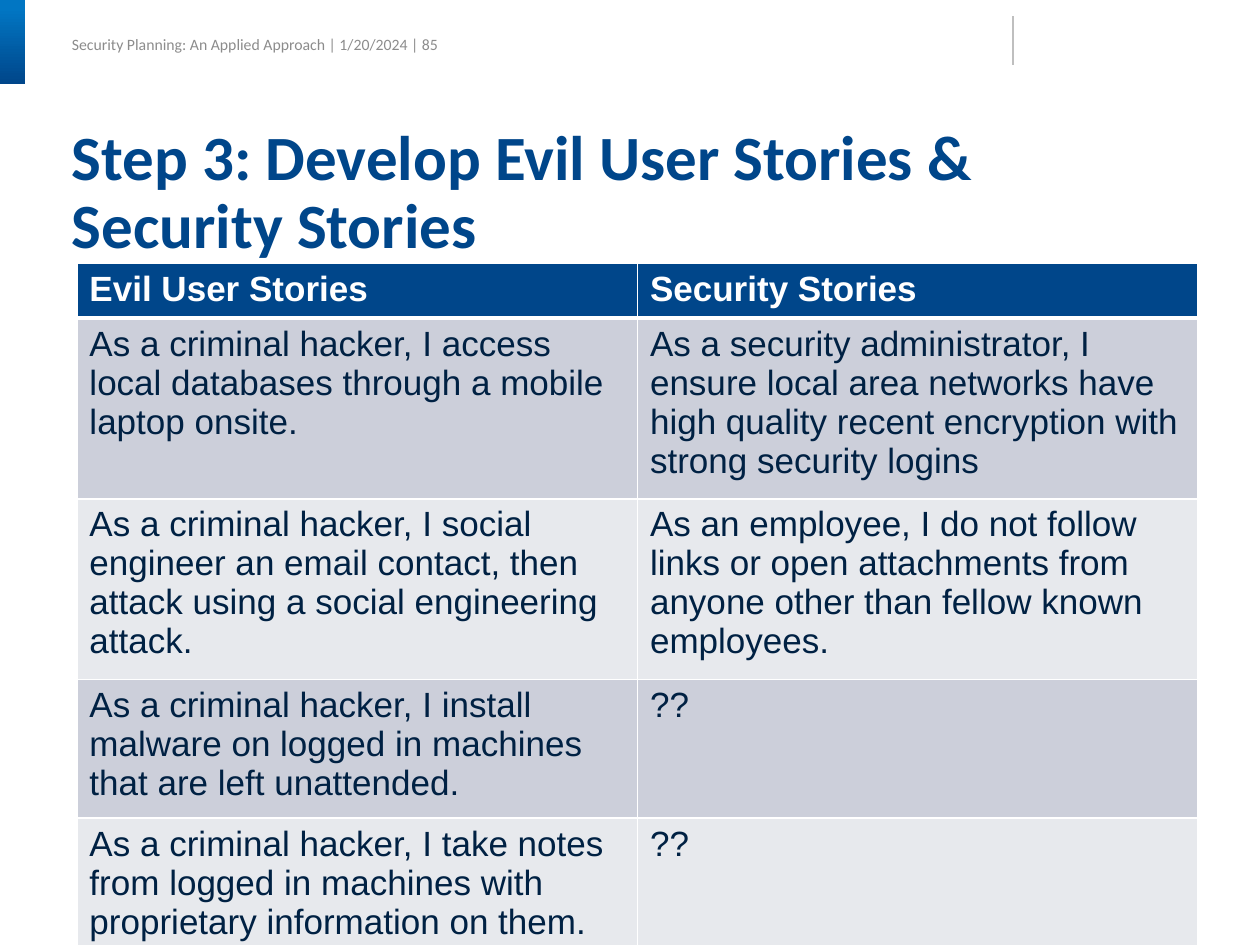
from lxml import etree
from pptx import Presentation
from pptx.dml.color import RGBColor
from pptx.enum.shapes import MSO_CONNECTOR, MSO_SHAPE
from pptx.enum.text import MSO_ANCHOR
from pptx.oxml import parse_xml
from pptx.oxml.ns import nsdecls, qn
from pptx.util import Cm, Pt

BLUE = RGBColor(0x00, 0x46, 0x8A)
LIGHT_BLUE = RGBColor(0x01, 0x76, 0xC3)
NAVY = RGBColor(0x00, 0x21, 0x43)
GRAY = RGBColor(0x8C, 0x8C, 0x8C)
LINE_GRAY = RGBColor(0xBF, 0xBF, 0xBF)
WHITE = RGBColor(0xFF, 0xFF, 0xFF)
BAND_DARK = RGBColor(0xCC, 0xCF, 0xDA)
BAND_LIGHT = RGBColor(0xE7, 0xE9, 0xED)

STORIES = [
    ("Evil User Stories", "Security Stories"),
    ("As a criminal hacker, I access local databases through a mobile laptop onsite.",
     "As a security administrator, I ensure local area networks have high quality "
     "recent encryption with strong security logins"),
    ("As a criminal hacker, I social engineer an email contact, then attack using "
     "a social engineering attack.",
     "As an employee, I do not follow links or open attachments from anyone other "
     "than fellow known employees."),
    ("As a criminal hacker, I install malware on logged in machines that are left "
     "unattended.", "??"),
    ("As a criminal hacker, I take notes from logged in machines with proprietary "
     "information on them.", "??"),
]
ROW_HEIGHTS = [1.03, 3.41, 3.41, 2.62, 2.62]


def add_text(left, top, width, height, text, size, color):
    tf = slide.shapes.add_textbox(Cm(left), Cm(top), Cm(width), Cm(height)).text_frame
    tf.margin_left = tf.margin_top = tf.margin_right = tf.margin_bottom = 0
    tf.word_wrap = True
    tf.text = text
    font = tf.paragraphs[0].runs[0].font
    font.name, font.size, font.color.rgb = "Calibri", Pt(size), color
    return tf


def set_borders(cell, **widths):
    """Draw white borders; widths in points are keyed L, R, T and B."""
    tcPr = cell._tc.get_or_add_tcPr()
    for i, (side, width) in enumerate(widths.items()):
        tcPr.insert(i, parse_xml(
            f'<a:ln{side} {nsdecls("a")} w="{Pt(width)}"><a:solidFill>'
            f'<a:srgbClr val="{WHITE}"/></a:solidFill></a:ln{side}>'))


prs = Presentation()
prs.slide_width, prs.slide_height = Cm(25.4), Cm(19.05)
slide = prs.slides.add_slide(prs.slide_layouts[6])

# Page header
tf = add_text(1.45, 0.61, 9, 0.58,
              "Security Planning: An Applied Approach | 1/20/2024 | 85", 9, GRAY)
tf.vertical_anchor = MSO_ANCHOR.MIDDLE

sp = slide.shapes.add_shape(MSO_SHAPE.ROUNDED_RECTANGLE, 0, 0, Cm(0.51), Cm(1.7))
sp.adjustments[0] = 0
sp.shadow.inherit = False
sp.line.fill.background()
sp.fill.gradient()
sp.fill.gradient_angle = 270
for stop, color, position in zip(sp.fill.gradient_stops, (LIGHT_BLUE, BLUE), (0.1, 1)):
    stop.color.rgb = color
    stop.position = position

divider = slide.shapes.add_connector(MSO_CONNECTOR.STRAIGHT,
                                     Cm(20.42), Cm(0.33), Cm(20.42), Cm(1.32))
divider.line.color.rgb = LINE_GRAY
divider.line.width = Pt(0.75)
etree.SubElement(divider._element.spPr, qn("a:effectLst"))

# Title
tf = add_text(1.45, 2.54, 22.66, 2.77,
              "Step 3: Develop Evil User Stories & Security Stories", 36, BLUE)
tf.paragraphs[0].line_spacing = 0.9
tf.paragraphs[0].runs[0].font.bold = True

# Table of stories
table = slide.shapes.add_table(len(STORIES), 2, Cm(1.55), Cm(5.31),
                               Cm(22.6), Cm(sum(ROW_HEIGHTS))).table
for r, (row, height) in enumerate(zip(STORIES, ROW_HEIGHTS)):
    table.rows[r].height = Cm(height)
    header = r == 0
    for c, text in enumerate(row):
        cell = table.cell(r, c)
        cell.text = text
        font = cell.text_frame.paragraphs[0].runs[0].font
        font.name, font.size, font.bold = "Arial", Pt(20), header
        font.color.rgb = WHITE if header else NAVY
        cell.fill.solid()
        cell.fill.fore_color.rgb = BLUE if header else BAND_DARK if r % 2 else BAND_LIGHT
        set_borders(cell, L=1, R=1, T=3 if r == 1 else 1, B=3 if header else 1)

prs.save("out.pptx")
